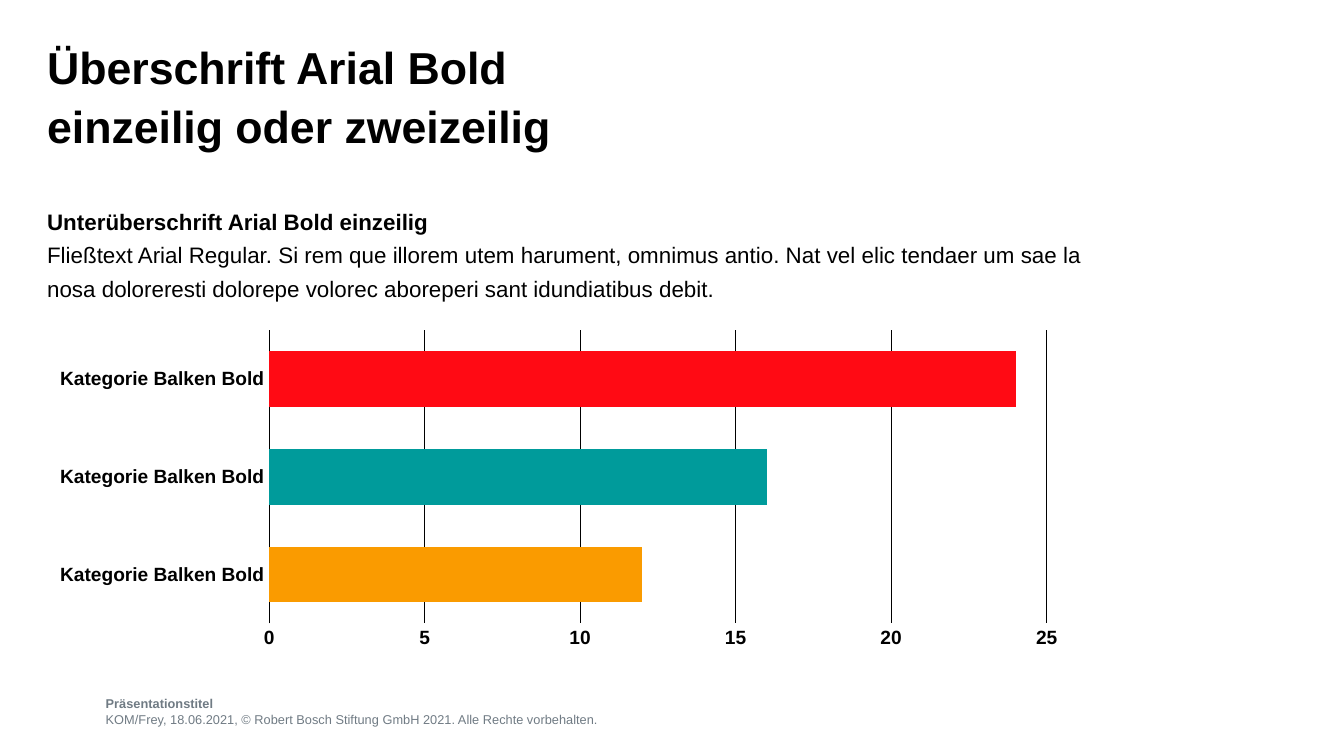
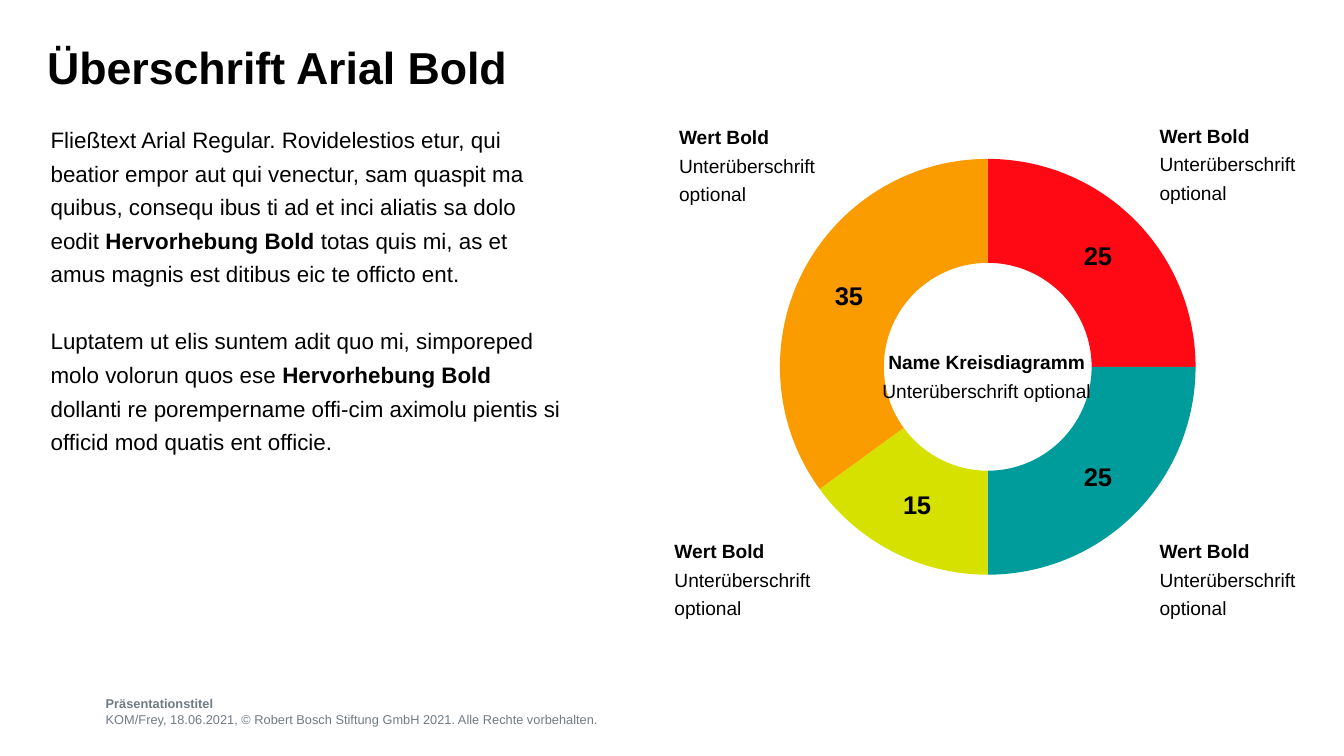
"""Build two chart slides, a bar chart and a doughnut chart, with a shared title, body and footer style."""
from lxml import etree
from pptx import Presentation
from pptx.chart.data import CategoryChartData
from pptx.dml.color import RGBColor
from pptx.enum.chart import XL_CHART_TYPE, XL_TICK_MARK
from pptx.enum.text import MSO_ANCHOR, MSO_AUTO_SIZE, PP_ALIGN
from pptx.oxml import parse_xml
from pptx.oxml.ns import nsdecls, qn
from pptx.util import Inches, Pt

BAR, DOUGHNUT = XL_CHART_TYPE.BAR_CLUSTERED, XL_CHART_TYPE.DOUGHNUT
NO_TICK = XL_TICK_MARK.NONE
TOP = MSO_ANCHOR.TOP
FIXED, GROW = MSO_AUTO_SIZE.NONE, MSO_AUTO_SIZE.SHAPE_TO_FIT_TEXT
LEFT, CENTER = PP_ALIGN.LEFT, PP_ALIGN.CENTER

CM_PER_INCH = 2.54
FONT = "Arial"
BLACK, GREY = "000000", "707B84"
RED, TEAL, LIME, ORANGE = "FF0A14", "009B9B", "D7E100", "FA9B00"
rgb = RGBColor.from_string

TITLE = dict(size=28, spacing=1.1)
BODY = dict(size=14, spacing=1.25)
LABEL = dict(size=12, spacing=1.25)
FOOTER = dict(size=8, spacing=1.07, color=GREY)


def write(tf, paras, size, spacing, color=BLACK, align=LEFT, gaps=()):
    """Fill a text frame with paragraphs, each a list of (text, bold) runs."""
    for i, runs in enumerate(paras):
        p = tf.paragraphs[0] if i == 0 else tf.add_paragraph()
        fmt = dict(alignment=align, line_spacing=spacing,
                   space_before=Pt(dict(gaps).get(i, 0)))
        for key, value in fmt.items():
            setattr(p, key, value)
        for text, bold in runs:
            for j, line in enumerate(text.split("\n")):
                if j:
                    p.add_line_break()
                r = p.add_run()
                r.text = line
                r.font.color.rgb = rgb(color)
                for key, value in dict(name=FONT, size=Pt(size), bold=bold).items():
                    setattr(r.font, key, value)


def add_chart(s, kind, box, cats, vals, colors, plot_box):
    """Add a one-series chart with coloured points and a fixed plot area."""
    data = CategoryChartData()
    data.categories = cats
    data.add_series("Series 1", vals)
    chart = s.shapes.add_chart(kind, *map(Inches, box), data).chart
    chart.has_legend = chart.has_title = False
    chart.font.color.rgb = rgb(BLACK)
    for key, value in dict(name=FONT, size=Pt(12), bold=True).items():
        setattr(chart.font, key, value)
    for i, color in enumerate(colors):
        fill = chart.plots[0].series[0].points[i].format.fill
        fill.solid()
        fill.fore_color.rgb = rgb(color)
    area = chart.element.find(".//" + qn("c:plotArea"))
    for old in area.findall(qn("c:layout")):
        area.remove(old)
    parts = [("layoutTarget", "inner"), ("xMode", "edge"), ("yMode", "edge"),
             *zip("xywh", plot_box)]
    inner = "".join(f'<c:{tag} val="{val}"/>' for tag, val in parts)
    area.insert(0, parse_xml(f'<c:layout {nsdecls("c")}><c:manualLayout>'
                             f'{inner}</c:manualLayout></c:layout>'))
    return chart


prs = Presentation()
prs.slide_width = Inches(29.7 / CM_PER_INCH)
prs.slide_height = Inches(16.7 / CM_PER_INCH)

pages = [
    dict(title="Überschrift Arial Bold \neinzeilig oder zweizeilig",
         title_box=(0.41, 0.3, 9.02, 1.1),
         body_box=(0.41, 1.75, 9.02, 1.42),
         body=[[("Unterüberschrift Arial Bold einzeilig", True)],
               [("Fließtext Arial Regular. Si rem que illorem utem harument, omnimus antio. "
                 "Nat vel elic tendaer um sae la nosa doloreresti dolorepe volorec aboreperi "
                 "sant idundiatibus debit.", False)]],
         gaps={}),
    dict(title="Überschrift Arial Bold",
         title_box=(0.41, 0.3, 9.02, 0.75),
         body_box=(0.44, 1.04, 4.47, 3.98),
         body=[[("Fließtext Arial Regular. Rovidelestios etur, qui beatior empor aut qui "
                 "venectur, sam quaspit ma quibus, consequ ibus ti ad et inci aliatis sa "
                 "dolo", False)],
               [("eodit ", False), ("Hervorhebung Bold ", True),
                ("totas quis mi, as et amus magnis est ditibus eic te officto ent.", False)],
               [("Luptatem ut elis suntem adit quo mi, simporeped molo volorun quos ese ",
                 False), ("Hervorhebung Bold ", True),
                ("dollanti re porempername offi-cim aximolu pientis si officid mod quatis "
                 "ent officie.", False)]],
         gaps={2: 21}),
]

for page in pages:
    s = prs.slides.add_slide(prs.slide_layouts[1])
    footer = s.shapes.add_textbox(*map(Inches, (0.92, 5.96, 7.6, 0.39)))
    title, body = s.shapes.title, s.placeholders[1]
    for sp, box in ((title, page["title_box"]), (body, page["body_box"])):
        sp.left, sp.top, sp.width, sp.height = map(Inches, box)
    for sp, inset in ((title, 0), (body, 0), (footer, 0.08)):
        fmt = dict(margin_left=0, margin_top=Inches(inset), margin_right=0, margin_bottom=0,
                   word_wrap=True, auto_size=FIXED, vertical_anchor=TOP)
        for key, value in fmt.items():
            setattr(sp.text_frame, key, value)
    write(title.text_frame, [[(page["title"], True)]], **TITLE)
    write(body.text_frame, page["body"], **BODY, gaps=page["gaps"])
    for p in body.text_frame.paragraphs:
        pPr = p._p.get_or_add_pPr()
        pPr.set("marL", "0")
        pPr.set("indent", "0")
        etree.SubElement(pPr, qn("a:buNone"))
    write(footer.text_frame,
          [[("Präsentationstitel", True)],
           [("KOM/Frey, 18.06.2021, © Robert Bosch Stiftung GmbH 2021. "
             "Alle Rechte vorbehalten.", False)]], **FOOTER)

bar_slide, ring_slide = prs.slides

chart = add_chart(bar_slide, BAR, (0.33, 2.72, 9.02, 3.01), ["Kategorie Balken Bold"] * 3,
                  (12, 16, 24), (ORANGE, TEAL, RED), (0.223, 0.051, 0.75, 0.847))
plot = chart.plots[0]
plot.gap_width, plot.overlap, plot.vary_by_categories = 75, -25, False
cat_axis, val_axis = chart.category_axis, chart.value_axis
for axis in (cat_axis, val_axis):
    axis.major_tick_mark = axis.minor_tick_mark = NO_TICK
for key, value in dict(minimum_scale=0, maximum_scale=25, major_unit=5,
                       has_major_gridlines=True).items():
    setattr(val_axis, key, value)
for line in (cat_axis.format.line, val_axis.major_gridlines.format.line):
    line.color.rgb = rgb(BLACK)
    line.width = Pt(0.75)
val_axis.format.line.fill.background()

chart = add_chart(ring_slide, DOUGHNUT, (5.88, 1.04, 5.39, 4.69), ["1", "2", "3", "4"],
                  (25, 25, 15, 35), (RED, TEAL, LIME, ORANGE), (0.168, 0.072, 0.671, 0.773))
chart.element.find(".//" + qn("c:holeSize")).set("val", "70")
labels = chart.plots[0].series[0].data_labels
labels.show_value = True
labels.show_percentage = labels.show_category_name = labels.show_legend_key = False
labels.font.color.rgb = rgb(BLACK)
for key, value in dict(name=FONT, size=Pt(16), bold=True).items():
    setattr(labels.font, key, value)

value_label = ("Wert Bold", "Unterüberschrift\noptional")
ring_name = ("Name Kreisdiagramm", "Unterüberschrift optional")
captions = [((x, y, 1.4, 0.86), value_label, LEFT)
            for x, y in ((5.81, 0.99), (5.77, 4.59), (9.99, 4.59), (9.99, 0.98))]
captions.append(((7.57, 2.95, 2.03, 0.61), ring_name, CENTER))
for box, (head, sub), align in captions:
    tf = ring_slide.shapes.add_textbox(*map(Inches, box)).text_frame
    tf.word_wrap = False
    tf.auto_size = GROW
    write(tf, [[(head, True)], [(sub, False)]], **LABEL, align=align)

prs.save("out.pptx")
